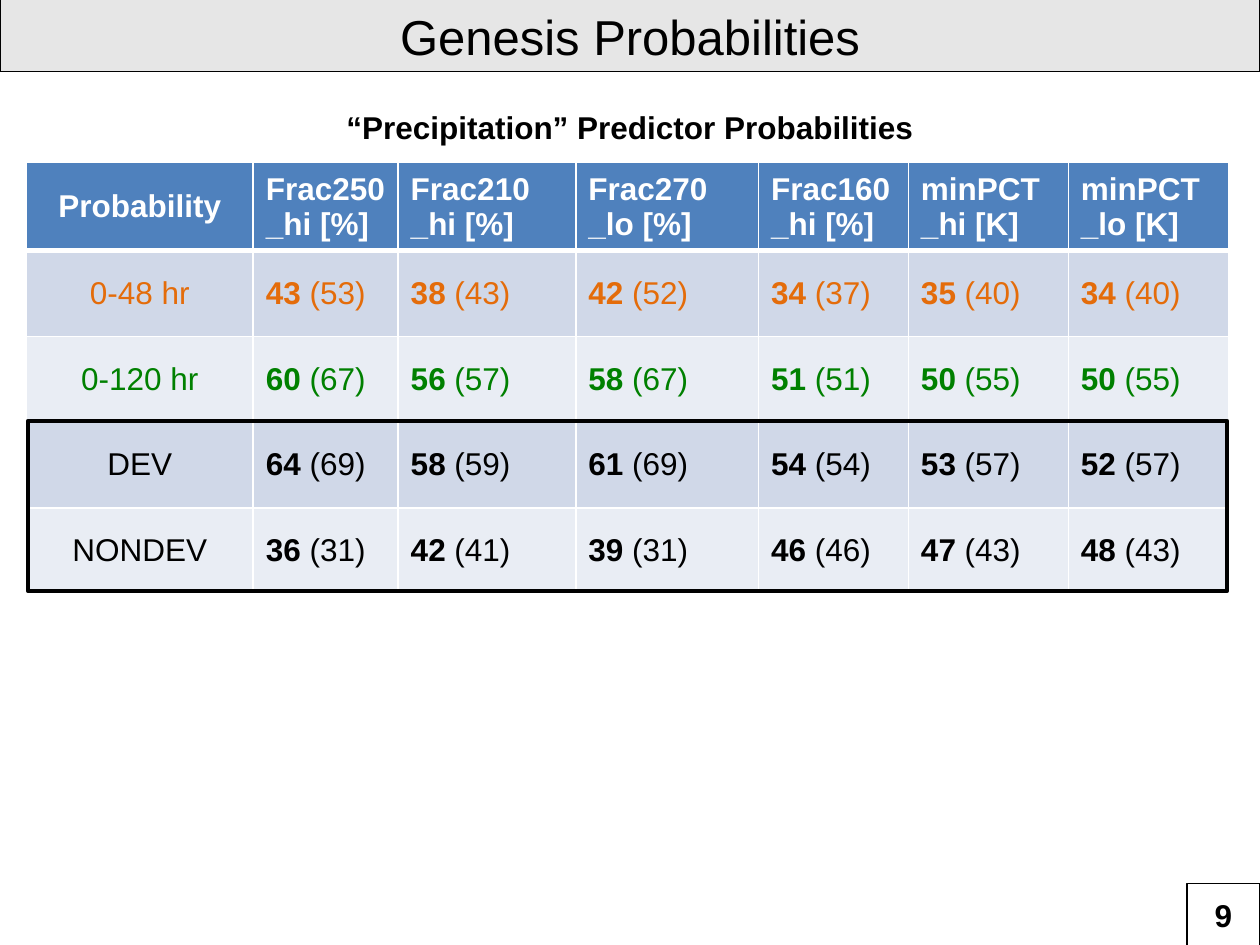
"""Build the slide of genesis probabilities by predictor."""
from typing import NamedTuple, Optional

from lxml.etree import SubElement
from pptx import Presentation
from pptx.dml.color import RGBColor
from pptx.enum.shapes import MSO_SHAPE
from pptx.enum.text import MSO_ANCHOR, PP_ALIGN
from pptx.oxml.ns import qn
from pptx.util import Inches, Pt

HUES = {
    "black": "000000", "white": "FFFFFF", "grey": "BFBFBF",
    "head": "4F81BD", "dark": "D0D8E8", "light": "E9EDF4",
    "orange": "E46C0A", "green": "008000",
}
WIDTHS = [1.8, 1.15, 1.41, 1.45, 1.19, 1.27, 1.27]
HIGH = 0.68


class Frame(NamedTuple):
    left: float
    top: float
    width: float
    height: float
    line: float
    fill: Optional[str] = None
    alpha: int = 100


class Label(NamedTuple):
    left: float
    top: float
    width: float
    height: float
    text: str
    size: int = 18
    bold: bool = True


class Row(NamedTuple):
    name: str
    hue: str
    fill: str
    pairs: list


HEADS = ["Probability", "Frac250_hi [%]", "Frac210\n_hi [%]", "Frac270\n_lo [%]",
         "Frac160_hi [%]", "minPCT\n_hi [K]", "minPCT\n_lo [K]"]
ROWS = [
    Row("0-48 hr", "orange", "dark",
        [(43, 53), (38, 43), (42, 52), (34, 37), (35, 40), (34, 40)]),
    Row("0-120 hr", "green", "light",
        [(60, 67), (56, 57), (58, 67), (51, 51), (50, 55), (50, 55)]),
    Row("DEV", "black", "dark",
        [(64, 69), (58, 59), (61, 69), (54, 54), (53, 57), (52, 57)]),
    Row("NONDEV", "black", "light",
        [(36, 31), (42, 41), (39, 31), (46, 46), (47, 43), (48, 43)]),
]


def tint(name: str) -> RGBColor:
    return RGBColor.from_string(HUES[name])


def add_run(para, text: str, hue: str, bold: bool, size: int = 18) -> None:
    run = para.add_run()
    run.text = text
    run.font.name = "Arial"
    run.font.size = Pt(size)
    run.font.bold = bold
    run.font.color.rgb = tint(hue)


def add_frame(slide, item: Frame) -> None:
    shape = slide.shapes.add_shape(MSO_SHAPE.RECTANGLE, *map(Inches, item[:4]))
    shape.shadow.inherit = False
    shape.line.color.rgb = tint("black")
    shape.line.width = Pt(item.line)
    if item.fill is None:
        shape.fill.background()
        return
    shape.fill.solid()
    shape.fill.fore_color.rgb = tint(item.fill)
    color = shape.fill._xPr.find(f".//{qn('a:srgbClr')}")
    SubElement(color, qn("a:alpha"), val=str(item.alpha * 1000))


def add_label(slide, item: Label) -> None:
    box = slide.shapes.add_textbox(*map(Inches, item[:4])).text_frame
    box.word_wrap = True
    para = box.paragraphs[0]
    para.alignment = PP_ALIGN.CENTER
    add_run(para, item.text, "black", item.bold, item.size)


def style_cell(cell, fill: str, top: int, base: int) -> None:
    props = cell._tc.get_or_add_tcPr()
    for side, width in (("L", 1), ("R", 1), ("T", top), ("B", base)):
        edge = SubElement(props, qn(f"a:ln{side}"), w=str(Pt(width)))
        paint = SubElement(edge, qn("a:solidFill"))
        SubElement(paint, qn("a:srgbClr"), val=HUES["white"])
    cell.fill.solid()
    cell.fill.fore_color.rgb = tint(fill)
    cell.vertical_anchor = MSO_ANCHOR.MIDDLE


def add_grid(slide, left: float, top: float) -> None:
    count = len(ROWS) + 1
    spot = map(Inches, (left, top, sum(WIDTHS), HIGH * count))
    table = slide.shapes.add_table(count, len(WIDTHS), *spot).table
    for col, width in zip(table.columns, WIDTHS):
        col.width = Inches(width)
    for col, head in enumerate(HEADS):
        cell = table.cell(0, col)
        style_cell(cell, "head", 1, 3)
        frame = cell.text_frame
        for num, text in enumerate(head.split("\n")):
            para = frame.add_paragraph() if num else frame.paragraphs[0]
            add_run(para, text, "white", True)
    for num, row in enumerate(ROWS, 1):
        for col in range(len(WIDTHS)):
            cell = table.cell(num, col)
            style_cell(cell, row.fill, 3 if num == 1 else 1, 1)
            para = cell.text_frame.paragraphs[0]
            if col == 0:
                add_run(para, row.name, row.hue, False)
            else:
                main, side = row.pairs[col - 1]
                add_run(para, str(main), row.hue, True)
                add_run(para, f" ({side})", row.hue, False)
    for num in range(count):
        table.cell(num, 0).text_frame.paragraphs[0].alignment = PP_ALIGN.CENTER


def main() -> None:
    deck = Presentation()
    deck.slide_width, deck.slide_height = Inches(10), Inches(7.5)
    slide = deck.slides.add_slide(deck.slide_layouts[6])
    add_frame(slide, Frame(0, -0.02, 10, 0.59, 0.75, "grey", 39))
    add_label(slide, Label(0, 0, 10, 0.57, "Genesis Probabilities", 28, False))
    add_label(slide, Label(0, 0.81, 10, 0.41, "“Precipitation” Predictor Probabilities"))
    add_grid(slide, 0.21, 1.29)
    add_frame(slide, Frame(9.42, 7.01, 0.58, 0.5, 0.75))
    add_label(slide, Label(9.42, 7.06, 0.58, 0.4, "9"))
    add_frame(slide, Frame(0.22, 3.34, 9.52, 1.35, 2.25))
    deck.save("out.pptx")


if __name__ == "__main__":
    main()
